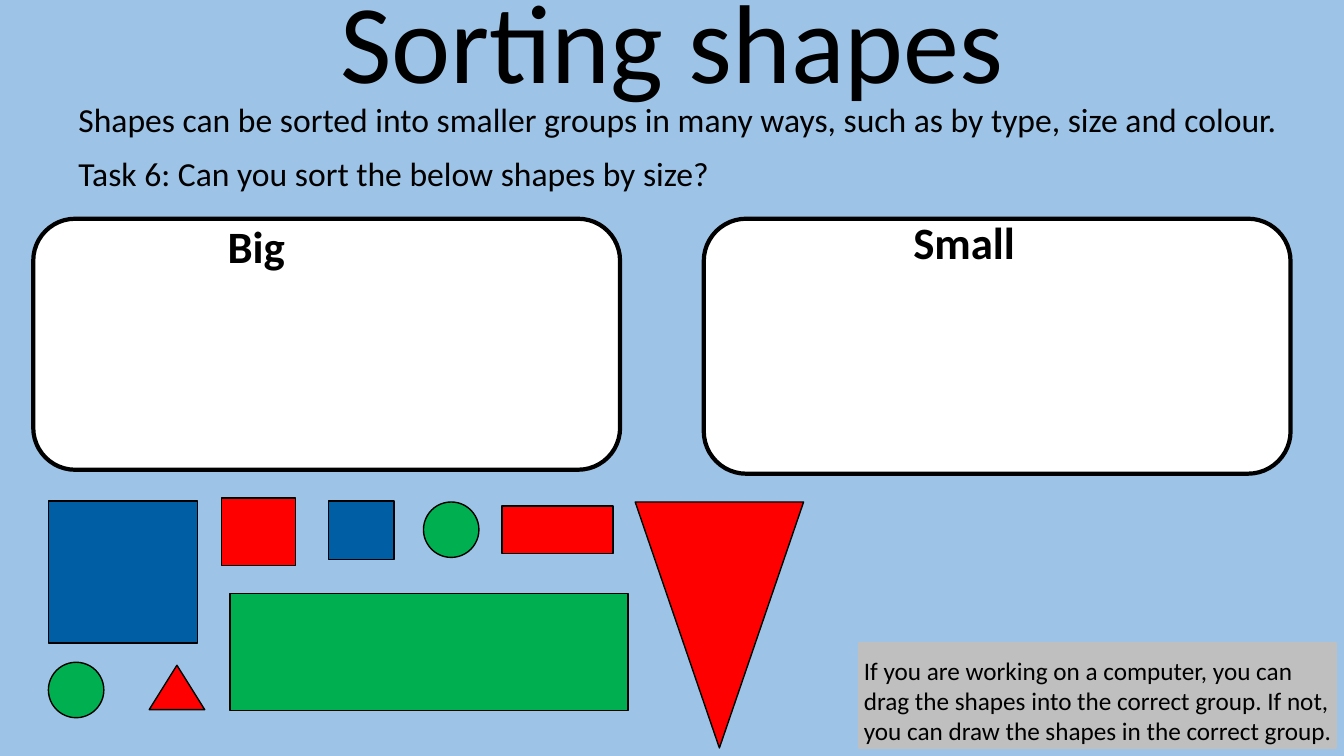
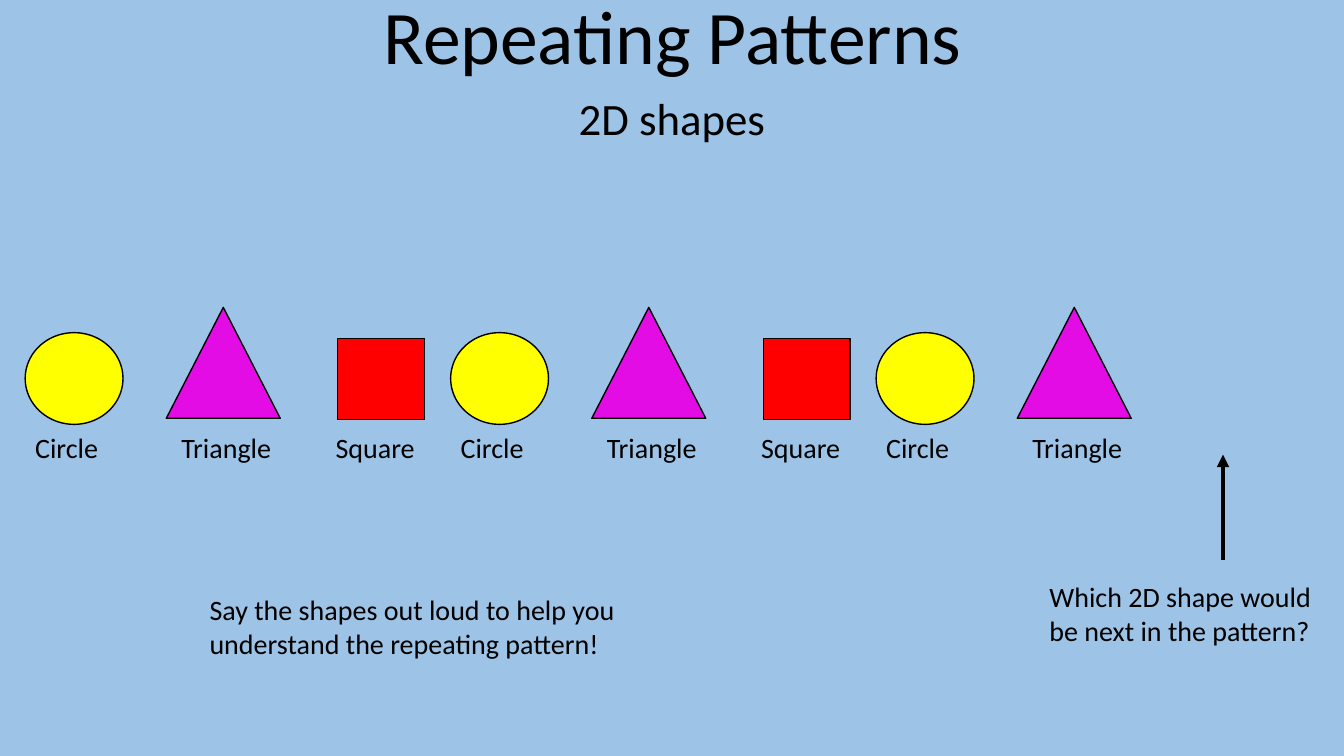
from lxml import etree
from pptx import Presentation
from pptx.dml.color import RGBColor
from pptx.enum import shapes, text
from pptx.oxml import ns
from pptx.util import Inches, Pt

FONT = "Calibri"
COLOURS = {
    "sky": "9DC3E6", "black": "000000", "white": "FFFFFF", "grey": "BFBFBF",
    "blue": "005EA4", "green": "00B050", "red": "FF0000",
    "yellow": "FFFF00", "purple": "E40CE4",
}
KIND = shapes.MSO_SHAPE
RECT, OVAL = KIND.RECTANGLE, KIND.OVAL
TRI, ROUND = KIND.ISOSCELES_TRIANGLE, KIND.ROUNDED_RECTANGLE

INTRO = [
    "Shapes can be sorted into smaller groups in many ways, such as by type, size and colour.",
    "Task 6: Can you sort the below shapes by size?",
]
HINT = ("If you are working on a computer, you can drag the shapes into the correct group. "
        "If not, you can draw the shapes in the correct group.")

# name, box, label position
GROUPS = [
    ("Big", (0.33, 2.17, 5.82, 2.49), (2.16, 2.12)),
    ("Small", (6.98, 2.17, 5.82, 2.53), (8.96, 2.08)),
]
# kind, colour, box, rotation
PIECES = [
    (RECT, "blue", (0.48, 4.97, 1.48, 1.41), 0),
    (RECT, "green", (2.28, 5.89, 3.95, 1.16), 0),
    (RECT, "blue", (3.26, 4.97, 0.65, 0.58), 0),
    (TRI, "red", (6.3, 4.98, 1.67, 2.44), 180),
    (RECT, "red", (4.98, 5.02, 1.1, 0.47), 0),
    (OVAL, "green", (0.48, 6.57, 0.55, 0.55), 0),
    (OVAL, "green", (4.2, 4.98, 0.55, 0.55), 0),
    (TRI, "red", (1.48, 6.6, 0.55, 0.44), 0),
    (RECT, "red", (2.2, 4.94, 0.73, 0.67), 0),
]

# name, kind, colour, box and label offset within one repeat
PATTERN = [
    ("Circle", OVAL, "yellow", (0, 3.3, 0.97, 0.91), 0),
    ("Triangle", TRI, "purple", (1.4, 3.05, 1.13, 1.1), 1.45),
    ("Square", RECT, "red", (3.1, 3.36, 0.86, 0.8), 2.98),
]
START, PITCH, COUNT, LABEL_TOP = 0.25, 4.22, 8, 4.22
PROMPTS = [
    ("Which 2D shape would be next in the pattern?", (10.31, 5.7, 3, 0.77)),
    ("Say the shapes out loud to help you understand the repeating pattern!",
     (1.98, 5.83, 5, 0.77)),
]


def colour(name):
    return RGBColor.from_string(COLOURS[name])


def inches(box):
    return [Inches(v) for v in box]


def add_text(slide, lines, box, size, bold=False, centre=False, wrap=True, gap=0):
    frame = slide.shapes.add_textbox(*inches(box)).text_frame
    frame.word_wrap = wrap
    frame.text = "\n".join(lines)
    for i, para in enumerate(frame.paragraphs):
        para.alignment = text.PP_ALIGN.CENTER if centre else text.PP_ALIGN.LEFT
        para.space_before = Pt(gap if i else 0)
        for run in para.runs:
            run.font.name, run.font.size, run.font.bold = FONT, Pt(size), bold
            run.font.color.rgb = colour("black")


def add_piece(slide, kind, fill, box, turn=0, line="black", width=1):
    piece = slide.shapes.add_shape(kind, *inches(box))
    piece.shadow.inherit = False
    piece.rotation = turn
    piece.fill.solid()
    piece.fill.fore_color.rgb = colour(fill)
    piece.line.color.rgb = colour(line)
    piece.line.width = Pt(width)


def add_arrow(slide, start, end):
    arrow = slide.shapes.add_connector(
        shapes.MSO_CONNECTOR.STRAIGHT, *inches(start + end))
    arrow.line.color.rgb = colour("black")
    arrow.line.width = Pt(3)
    props = arrow.line._get_or_add_ln()
    etree.SubElement(props, ns.qn("a:tailEnd"), type="triangle")
    etree.SubElement(arrow._element.spPr, ns.qn("a:effectLst"))


def add_slide(deck, title, box, size):
    slide = deck.slides.add_slide(deck.slide_layouts[6])
    slide.background.fill.solid()
    slide.background.fill.fore_color.rgb = colour("sky")
    add_text(slide, [title], box, size, centre=True, wrap=False)
    return slide


def sorting(deck):
    slide = add_slide(deck, "Sorting shapes", (3.24, -0.33, 6.85, 1.45), 80)
    add_text(slide, INTRO, (0.68, 0.93, 12.47, 1.06), 24, gap=10)
    for name, box, spot in GROUPS:
        add_piece(slide, ROUND, "white", box, width=3)
        add_text(slide, [name], spot + (3, 0.64), 32, bold=True)
    for piece in PIECES:
        add_piece(slide, *piece)
    add_piece(slide, RECT, "grey", (8.52, 6.38, 4.73, 1.04), line="grey")
    add_text(slide, [HINT], (8.47, 6.45, 4.9, 1.01), 18)


def patterns(deck):
    slide = add_slide(deck, "Repeating Patterns", (3.66, -0.16, 6.02, 1.01), 54)
    add_text(slide, ["2D shapes"], (0, 0.85, 13.33, 0.64), 32, centre=True)
    for i in range(COUNT):
        turn, step = divmod(i, len(PATTERN))
        name, kind, fill, (left, *rest), shift = PATTERN[step]
        base = START + turn * PITCH
        add_piece(slide, kind, fill, (base + left, *rest))
        add_text(slide, [name], (base + shift, LABEL_TOP, 1.3, 0.44), 20)
    add_arrow(slide, (12.13, 5.56), (12.13, 4.51))
    for words, box in PROMPTS:
        add_text(slide, [words], box, 20)


def main():
    deck = Presentation()
    deck.slide_width, deck.slide_height = Inches(13.33), Inches(7.5)
    sorting(deck)
    patterns(deck)
    deck.save("out.pptx")


if __name__ == "__main__":
    main()
